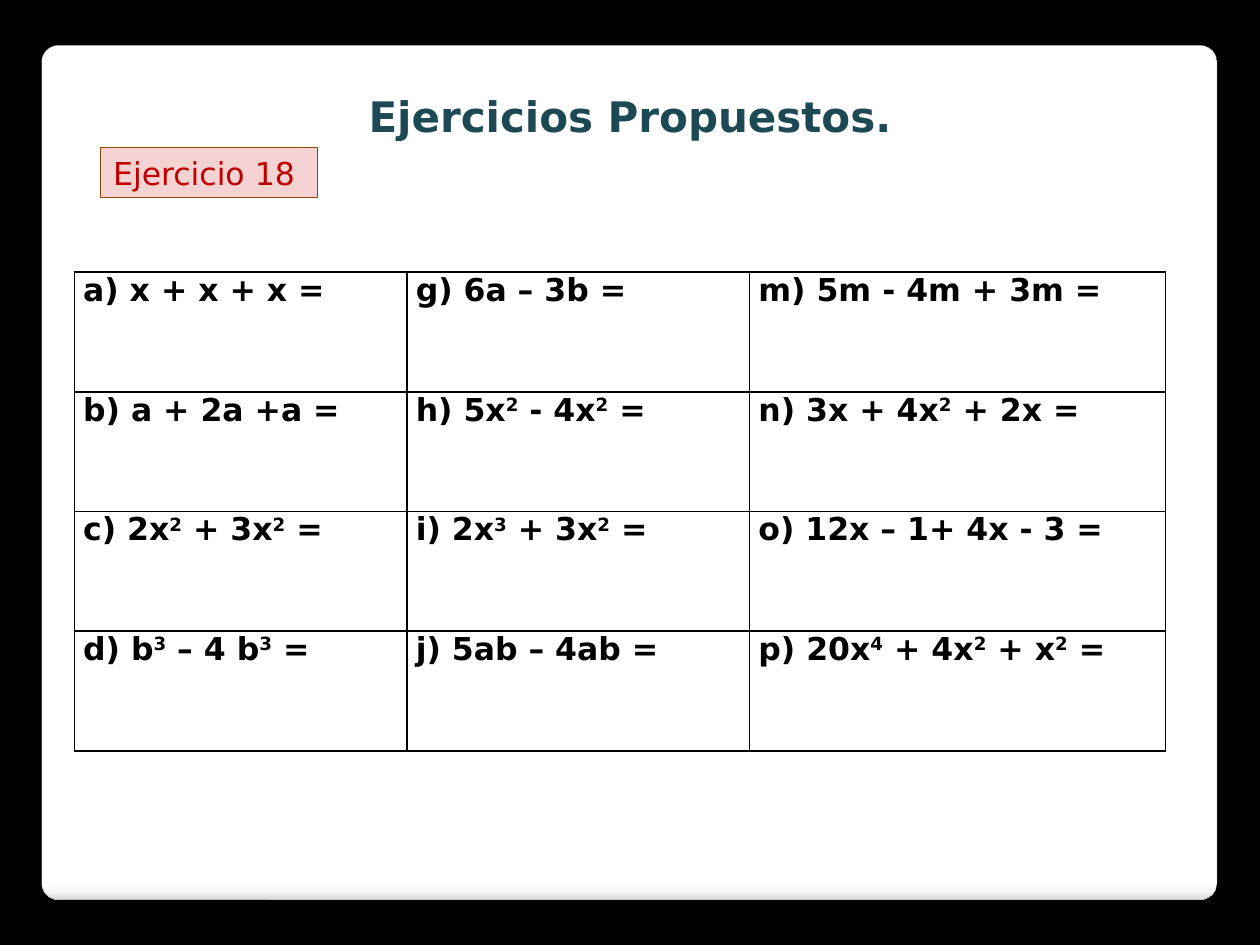
from typing import NamedTuple

from lxml import etree
from pptx import Presentation
from pptx.dml.color import RGBColor
from pptx.enum.shapes import MSO_SHAPE
from pptx.enum.text import PP_ALIGN
from pptx.oxml.ns import qn
from pptx.util import Inches, Pt

ROUNDED = MSO_SHAPE.ROUNDED_RECTANGLE
RECTANGLE = MSO_SHAPE.RECTANGLE
LEFT, CENTER = PP_ALIGN.LEFT, PP_ALIGN.CENTER

FONT = "DejaVu Sans"
PANEL_STOPS = [(0, "FFFFFF"), (98, "FFFFFF"), (99, "F7F7F7"), (100, "DADADA")]
COLUMN_WIDTHS = [2.64, 2.72, 3.3]
ROW_HEIGHT = 0.95
# A caret raises the character after it
EXERCISES = [
    ["a) x + x + x =", "g) 6a – 3b =", "m) 5m - 4m + 3m ="],
    ["b) a + 2a +a =", "h) 5x^2 - 4x^2 =", "n) 3x + 4x^2 + 2x ="],
    ["c) 2x^2 + 3x^2 =", "i) 2x^3 + 3x^2 =", "o) 12x – 1+ 4x - 3 ="],
    ["d) b^3 – 4 b^3 =", "j) 5ab – 4ab =", "p) 20x^4 + 4x^2 + x^2 ="],
]


class Box(NamedTuple):
    left: float
    top: float
    width: float
    height: float

    def lengths(self) -> list:
        return [Inches(value) for value in self]


class TextStyle(NamedTuple):
    size: float
    color: str
    bold: bool = False
    align: PP_ALIGN = LEFT


def rgb(color: str) -> RGBColor:
    return RGBColor.from_string(color)


def add_box(slide, kind, box: Box, line_color: str, line_width: float):
    shape = slide.shapes.add_shape(kind, *box.lengths())
    shape.shadow.inherit = False
    shape.line.color.rgb = rgb(line_color)
    shape.line.width = Pt(line_width)
    return shape


def set_gradient(shape, stops: list) -> None:
    shape.fill.gradient()
    shape.fill.gradient_angle = 270
    stop_list = shape._element.spPr.find(qn("a:gradFill")).find(qn("a:gsLst"))
    for stop in list(stop_list):
        stop_list.remove(stop)
    for position, color in stops:
        stop = etree.SubElement(stop_list, qn("a:gs"), pos=str(position * 1000))
        etree.SubElement(stop, qn("a:srgbClr"), val=color)


def write(text_frame, text: str, style: TextStyle) -> None:
    text_frame.word_wrap = True
    paragraph = text_frame.paragraphs[0]
    paragraph.alignment = style.align
    paragraph.font.name = FONT
    paragraph.font.size = Pt(style.size)
    paragraph.font.bold = style.bold
    paragraph.font.color.rgb = rgb(style.color)
    first, *raised_parts = text.split("^")
    paragraph.add_run().text = first
    for part in raised_parts:
        exponent = paragraph.add_run()
        exponent.text = part[0]
        exponent._r.get_or_add_rPr().set("baseline", "30000")
        paragraph.add_run().text = part[1:]


def add_borders(cell, color: str, width: float) -> None:
    properties = cell._tc.get_or_add_tcPr()
    for index, side in enumerate(("a:lnL", "a:lnR", "a:lnT", "a:lnB")):
        line = etree.Element(qn(side), w=str(Pt(width)))
        fill = etree.SubElement(line, qn("a:solidFill"))
        etree.SubElement(fill, qn("a:srgbClr"), val=color)
        properties.insert(index, line)


def add_exercise_table(slide, left: float, top: float) -> None:
    box = Box(left, top, sum(COLUMN_WIDTHS), ROW_HEIGHT * len(EXERCISES))
    table = slide.shapes.add_table(
        len(EXERCISES), len(COLUMN_WIDTHS), *box.lengths()).table
    table.first_row = table.horz_banding = False
    for column, width in zip(table.columns, COLUMN_WIDTHS):
        column.width = Inches(width)
    style = TextStyle(18, "000000", bold=True)
    for row, exercises in zip(table.rows, EXERCISES):
        row.height = Inches(ROW_HEIGHT)
        for cell, exercise in zip(row.cells, exercises):
            cell.fill.background()
            cell.margin_left = cell.margin_right = Inches(0.07)
            cell.margin_top = cell.margin_bottom = 0
            write(cell.text_frame, exercise, style)
            add_borders(cell, "000000", 1)


def main() -> None:
    presentation = Presentation()
    presentation.slide_width = Inches(10)
    presentation.slide_height = Inches(7.5)
    slide = presentation.slides.add_slide(presentation.slide_layouts[6])
    slide.background.fill.solid()
    slide.background.fill.fore_color.rgb = rgb("000000")

    # White panel
    panel = add_box(slide, ROUNDED, Box(0.33, 0.36, 9.33, 6.78), "A4A4A4", 0.16)
    panel.adjustments[0] = 0.02
    set_gradient(panel, PANEL_STOPS)

    # Title
    title = slide.shapes.add_textbox(*Box(0.39, 0.67, 9.22, 0.5).lengths())
    write(title.text_frame, "Ejercicios Propuestos.",
          TextStyle(24, "1C4954", bold=True, align=CENTER))

    # Exercise label
    label = add_box(slide, RECTANGLE, Box(0.8, 1.17, 1.72, 0.4), "964305", 0.75)
    label.fill.solid()
    label.fill.fore_color.rgb = rgb("F5D3D3")
    write(label.text_frame, "Ejercicio 18", TextStyle(18, "C00000"))

    # Exercises
    add_exercise_table(slide, 0.59, 2.16)

    presentation.save("out.pptx")


if __name__ == "__main__":
    main()
